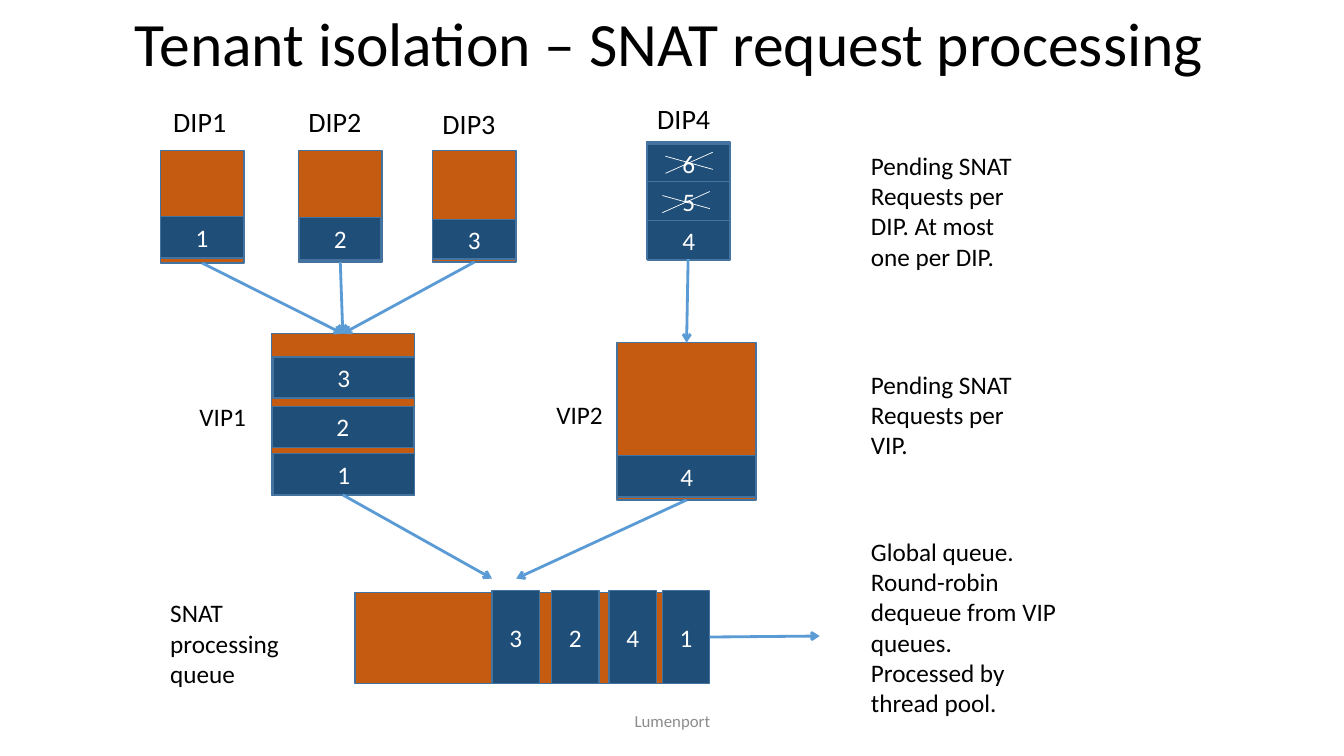
from lxml import etree
from pptx import Presentation
from pptx import util as u
from pptx.dml.color import RGBColor
from pptx.enum import shapes, text
from pptx.oxml.ns import qn

# Content: boxes are (left, top, width, height) in inches
COLORS = {"queue": "C55A11", "full": "BDD7EE", "slot": "1F4E79", "edge": "43739E",
          "arrow": "5B9BD5", "ink": "000000", "white": "FFFFFF", "footer": "8C8C8C"}
FONT = "Calibri"
TITLE = "Tenant isolation – SNAT request processing"

# Queue: (box, fill, size of a slot, [(number, slot left, slot top)])
QUEUES = {
    "DIP1": ((1.59, 1.49, 0.83, 1.12), "queue", (0.83, 0.41), [("1", 1.59, 2.15)]),
    "DIP2": ((2.96, 1.49, 0.83, 1.11), "queue", (0.81, 0.42), [("2", 2.97, 2.16)]),
    "DIP3": ((4.29, 1.49, 0.83, 1.11), "queue", (0.83, 0.39), [("3", 4.29, 2.18)]),
    "DIP4": ((6.41, 1.41, 0.83, 1.16), "full", (0.82, 0.39),
             [("4", 6.42, 2.19), ("6", 6.42, 1.43), ("5", 6.42, 1.8)]),
    "VIP1": ((2.69, 3.31, 1.42, 1.6), "queue", (1.4, 0.41),
             [("1", 2.71, 4.5), ("3", 2.71, 3.54), ("2", 2.7, 4.03)]),
    "VIP2": ((6.12, 3.4, 1.38, 1.56), "queue", (1.38, 0.41), [("4", 6.12, 4.52)]),
    "SNAT": ((3.52, 5.88, 3.5, 0.9), "queue", (0.47, 0.92),
             [("1", 6.57, 5.86), ("4", 6.04, 5.86), ("2", 5.47, 5.86), ("3", 4.88, 5.86)]),
}
LABELS = [
    ("DIP1", (1.62, 0.99, 0.83, 0.44), 20),
    ("DIP2", (2.96, 0.99, 0.83, 0.44), 20),
    ("DIP3", (4.29, 1.01, 0.83, 0.44), 20),
    ("DIP4", (6.42, 0.96, 0.83, 0.44), 20),
    ("VIP1", (1.88, 3.93, 0.83, 0.4), 18),
    ("VIP2", (5.42, 3.91, 0.83, 0.4), 18),
    ("SNAT processing queue", (1.59, 5.88, 1.67, 1.31), 18),
    ("Pending SNAT Requests per DIP. At most one per DIP.", (8.54, 1.44, 1.67, 1.31), 18),
    ("Pending SNAT Requests per VIP.", (8.54, 3.61, 1.67, 1.01), 18),
    ("Global queue. Round-robin dequeue from VIP queues. Processed by thread pool.",
     (8.54, 5.27, 2.05, 1.92), 18),
]
FOOTER = ("Lumenport", (4.42, 6.95, 4.5, 0.4))
FEEDS = [("DIP1", "VIP1"), ("DIP2", "VIP1"), ("DIP3", "VIP1"), ("DIP4", "VIP2")]
# Outgoing arrows: (queue, side, end point)
OUTPUTS = [("VIP1", 2, (4.88, 5.74)), ("VIP2", 2, (5.12, 5.74))]
DEQUEUED = (8.13, 6.31)
CROSSES = [(6.57, 1.9), (6.6, 1.51)]  # left, top of each cross

deck = Presentation()
deck.slide_width, deck.slide_height = u.Inches(13.33), u.Inches(7.5)
page = deck.slides.add_slide(deck.slide_layouts[5])


def inches(values):
    return [u.Inches(value) for value in values]


def color(name):
    return RGBColor.from_string(COLORS[name])


def write(shape, words, size=18, ink="ink", align=None, anchor=None, spacing=None):
    frame = shape.text_frame
    frame.word_wrap = True
    frame.auto_size = text.MSO_AUTO_SIZE.NONE
    frame.vertical_anchor = anchor
    para = frame.paragraphs[0]
    para.alignment, para.line_spacing = align, spacing
    span = para.add_run()
    span.text = words
    span.font.name, span.font.size = FONT, u.Pt(size)
    span.font.color.rgb = color(ink)


CENTERED = {"align": text.PP_ALIGN.CENTER, "anchor": text.MSO_ANCHOR.MIDDLE}


def add_box(box, fill):
    shape = page.shapes.add_shape(shapes.MSO_SHAPE.RECTANGLE, *inches(box))
    shape.shadow.inherit = False
    shape.fill.solid()
    shape.fill.fore_color.rgb = color(fill)
    shape.line.color.rgb = color("edge")
    shape.line.width = u.Pt(1)
    return shape


def add_line(holder, start, end, ink, width):
    line = holder.shapes.add_connector(shapes.MSO_CONNECTOR.STRAIGHT, *inches(start + end))
    line.line.color.rgb = color(ink)
    line.line.width = u.Pt(width)
    etree.SubElement(line._element.spPr, qn("a:effectLst"))
    return line


def add_arrow(source, side, end=(0, 0), target=None):
    arrow = add_line(page, (0, 0), end, "arrow", 2)
    arrow.begin_connect(source, side)
    if target is not None:
        arrow.end_connect(target, 0)
    etree.SubElement(arrow.line._get_or_add_ln(), qn("a:tailEnd"), type="arrow")


# Title
title = page.shapes.title
title.left, title.top, title.width, title.height = inches((0.89, -0.26, 11.5, 1.45))
write(title, TITLE, size=44, spacing=0.9, **CENTERED)

# Queues and the requests in them
queues, slots = {}, {}
for name, (box, fill, slot_size, requests) in QUEUES.items():
    queues[name] = add_box(box, fill)
    for number, left, top in requests:
        slot = add_box((left, top) + slot_size, "slot")
        write(slot, number, ink="white", **CENTERED)
        slots[name, number] = slot

# Arrows between the stages
for source, target in FEEDS:
    add_arrow(queues[source], 2, target=queues[target])
for source, side, end in OUTPUTS:
    add_arrow(queues[source], side, end)
add_arrow(slots["SNAT", "1"], 3, DEQUEUED)

# Crosses over the rejected requests
for left, top in CROSSES:
    cross = page.shapes.add_group_shape()
    right = left + 0.47
    add_line(cross, (left, top + 0.04), (right, top + 0.17), "white", 0.5)
    add_line(cross, (left, top + 0.21), (right, top), "white", 0.5)

# Labels and footer
for words, box, size in LABELS:
    write(page.shapes.add_textbox(*inches(box)), words, size=size)
footer, footer_box = FOOTER
write(page.shapes.add_textbox(*inches(footer_box)), footer, size=12, ink="footer", **CENTERED)

deck.save("out.pptx")
